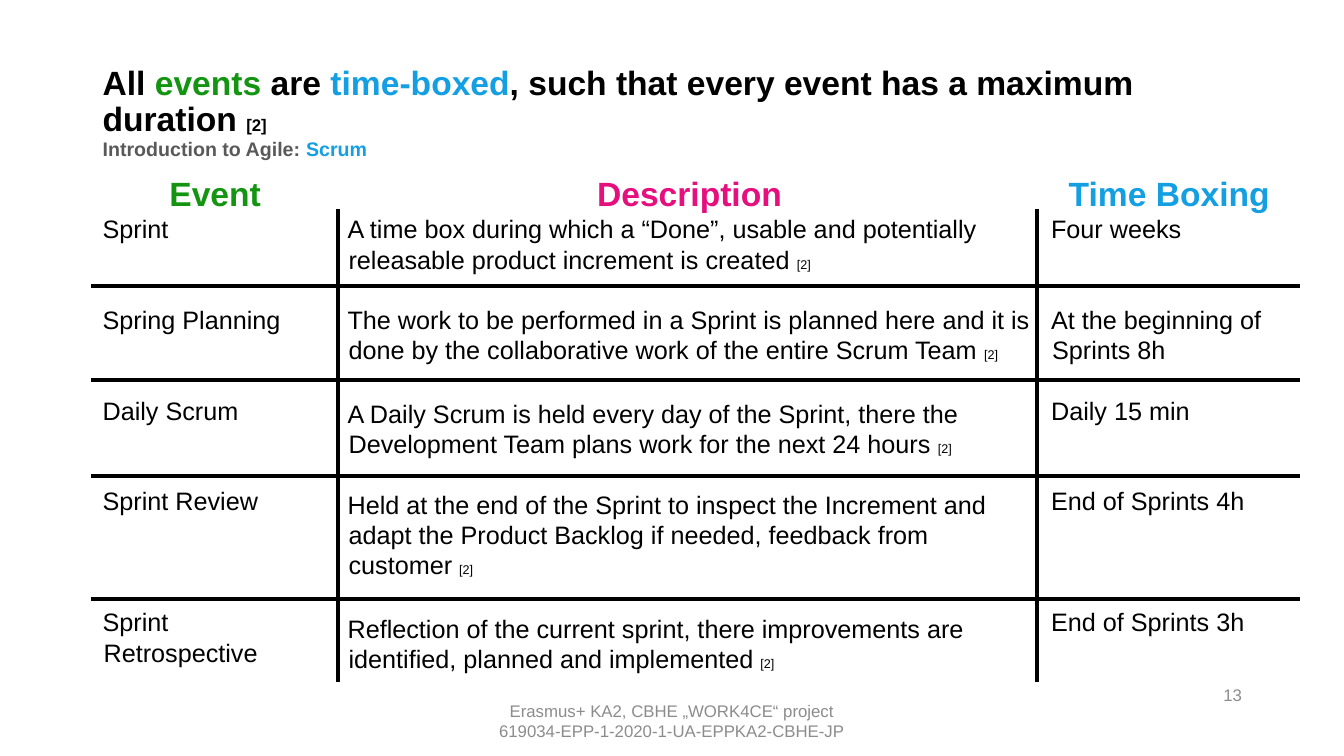
from pptx import Presentation
from pptx import util as u
from pptx.dml import color
from pptx.enum import shapes, text
from pptx.oxml import ns
from lxml import etree

HUES = {"black": "000000", "green": "139511", "blue": "159FE3",
        "pink": "E50F7E", "dark": "595959", "gray": "8C8C8C"}
LEFT, MID, RIGHT = text.PP_ALIGN.LEFT, text.PP_ALIGN.CENTER, text.PP_ALIGN.RIGHT
TOP, HALF = text.MSO_ANCHOR.TOP, text.MSO_ANCHOR.MIDDLE


class Page:
    face = "Arial"
    lead = 1.2
    rule = 3

    def __init__(self, deck):
        self.slide = deck.slides.add_slide(deck.slide_layouts[6])

    def box(self, x, y, w, h, anchor=TOP, wrap=True):
        shape = self.slide.shapes.add_textbox(u.Pt(x), u.Pt(y), u.Pt(w), u.Pt(h))
        frame = shape.text_frame
        frame.word_wrap = wrap
        frame.vertical_anchor = anchor
        return frame

    def fill(self, frame, lines, align=LEFT, space=None):
        frame.text = "\n".join(runs[0][0] for runs in lines)
        for para, runs in zip(frame.paragraphs, lines):
            para.alignment = align
            if space:
                para.line_spacing = space
            for words, *rest in runs[1:]:
                para.add_run().text = words
            for run, (words, size, hue, bold) in zip(para.runs, runs):
                font = run.font
                font.name, font.size, font.bold = self.face, u.Pt(size), bold
                font.color.rgb = color.RGBColor.from_string(HUES[hue])

    def column(self, x, w, head, hue, cells, gaps, cite=False):
        lines = [[(head, 24, hue, True)]]
        for words in cells:
            runs = [(words, 18, "black", False)]
            if cite:
                runs.append(("[2]", 9, "black", False))
            lines.append(runs)
        frame = self.box(x, 120.24, w, 375.84)
        self.fill(frame, lines)
        frame.paragraphs[0].alignment = MID
        for para, gap in zip(frame.paragraphs, [0, 0] + gaps):
            props = para._p.get_or_add_pPr()
            props.set("marL", str(u.Pt(0.72)))
            props.set("indent", str(u.Pt(-0.72)))
            if gap:
                para.space_before = u.Pt(gap * self.lead)

    def line(self, x1, y1, x2, y2):
        link = self.slide.shapes.add_connector(
            shapes.MSO_CONNECTOR.STRAIGHT, u.Pt(x1), u.Pt(y1), u.Pt(x2), u.Pt(y2))
        link.line.width = u.Pt(self.rule)
        link.line.color.rgb = color.RGBColor.from_string(HUES["black"])
        etree.SubElement(link._element.spPr, ns.qn("a:effectLst"))


def main():
    deck = Presentation()
    deck.slide_width, deck.slide_height = u.Pt(960), u.Pt(540)
    page = Page(deck)

    page.fill(page.box(348.48, 496.8, 262.8, 36, wrap=False), [
        [("Erasmus+ KA2, CBHE „WORK4CE“ project", 12, "gray", False)],
        [("619034-EPP-1-2020-1-UA-EPPKA2-CBHE-JP", 12, "gray", False)]], MID)
    page.fill(page.box(66.24, 63.36, 828, 35.28, HALF), [
        [("All ", 24, "black", True), ("events", 24, "green", True),
         (" are ", 24, "black", True), ("time-boxed", 24, "blue", True),
         (", such that every event has a maximum duration ", 24, "black", True),
         ("[2]", 12, "black", True)],
        [("Introduction to Agile: ", 14, "dark", True),
         ("Scrum", 14, "blue", True)]], space=0.9)
    page.fill(page.box(825.84, 481.68, 68.4, 28.8, HALF),
              [[("13", 12, "gray", False)]], RIGHT)

    page.column(66.24, 174.96, "Event", "green", [
        "Sprint", "Spring Planning", "Daily Scrum", "Sprint Review",
        "Sprint Retrospective"], [36, 36, 36, 54])
    page.column(241.2, 502.56, "Description", "pink", [
        "A time box during which a “Done”, usable and potentially "
        "releasable product increment is created ",
        "The work to be performed in a Sprint is planned here and it is "
        "done by the collaborative work of the entire Scrum Team ",
        "A Daily Scrum is held every day of the Sprint, there the "
        "Development Team plans work for the next 24 hours ",
        "Held at the end of the Sprint to inspect the Increment and adapt "
        "the Product Backlog if needed, feedback from customer ",
        "Reflection of the current sprint, there improvements are "
        "identified, planned and implemented "], [18, 20, 18, 20], cite=True)
    page.column(743.76, 182.88, "Time Boxing", "blue", [
        "Four weeks", "At the beginning of Sprints 8h", "Daily 15 min",
        "End of Sprints 4h", "End of Sprints 3h"], [36, 18, 36, 54])

    for x in (241.2, 740.88):
        page.line(x, 149.04, x, 487.44)
    for y in (204.48, 271.44, 339.84, 427.68):
        page.line(64.8, y, 928.8, y)

    deck.save("out.pptx")


if __name__ == "__main__":
    main()
